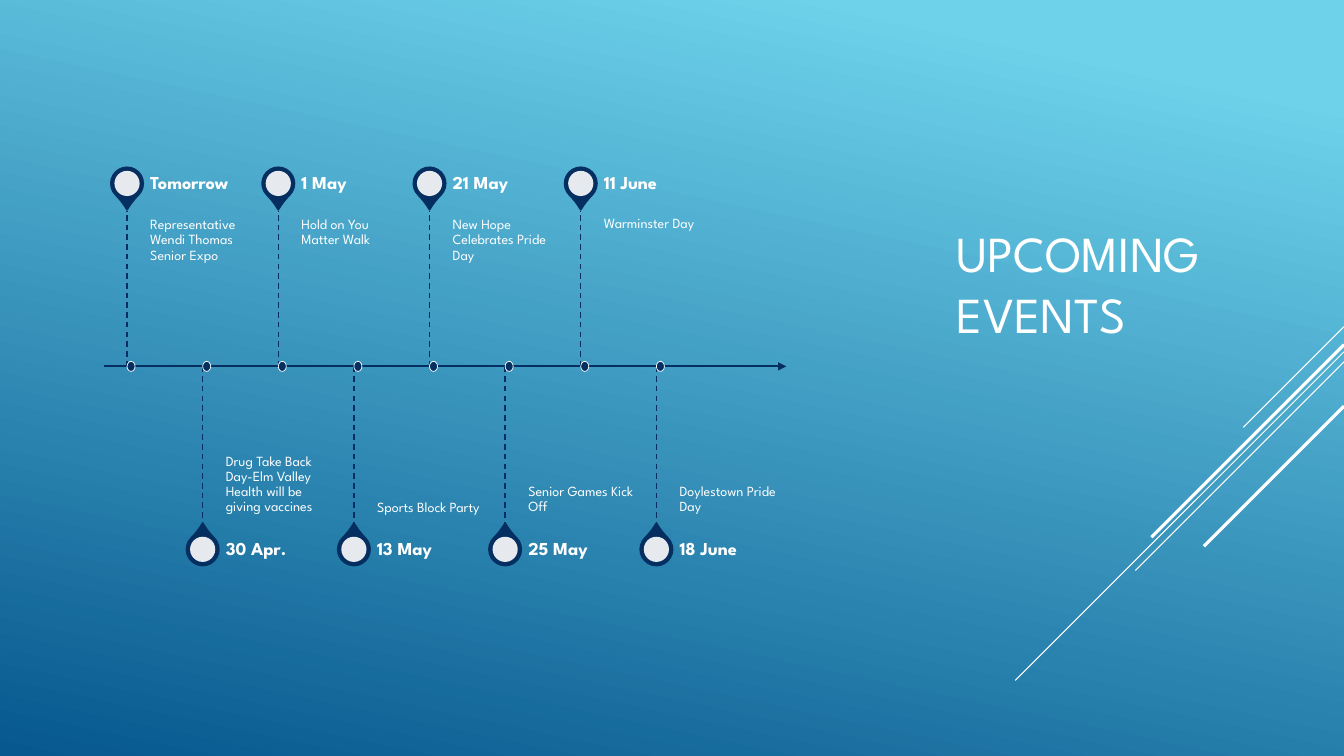
from collections import namedtuple

from lxml.etree import SubElement
from pptx import Presentation
from pptx.dml.color import RGBColor
from pptx.enum.dml import MSO_LINE as Dash
from pptx.enum.shapes import MSO_CONNECTOR as Connector, MSO_SHAPE as Shape
from pptx.enum.text import MSO_ANCHOR as Anchor, PP_ALIGN as Align
from pptx.oxml.ns import qn
from pptx.util import Inches, Pt

WHITE = RGBColor(0xFF, 0xFF, 0xFF)
NAVY = RGBColor(0x05, 0x2F, 0x61)
SKY = RGBColor(0x6E, 0xD2, 0xEB)
OCEAN = RGBColor(0x06, 0x58, 0x8E)
FONT = "League Spartan"

Box = namedtuple("Box", "left top width height")
SLIDE = Box(0, 0, 13.33, 7.5)
COLUMN = 0.75
LABEL_HEIGHT = 0.54

EVENTS = [
    ("Tomorrow", "Representative Wendi Thomas Senior Expo"),
    ("30 Apr.", "Drug Take Back Day-Elm Valley Health will be giving vaccines"),
    ("1 May", "Hold on You Matter Walk"),
    ("13 May", "Sports Block Party"),
    ("21 May", "New Hope Celebrates Pride Day"),
    ("25 May", "Senior Games Kick Off"),
    ("11 June", "Warminster Day"),
    ("18 June", "Doylestown Pride Day"),
]


def add_text(page, box, text, size, bold=False, anchor=Anchor.MIDDLE,
             margins=(0.1, 0.05, 0.1, 0.05), spacing=1.0):
    frame = page.shapes.add_textbox(*map(Inches, box)).text_frame
    frame.word_wrap = True
    frame.vertical_anchor = anchor
    (frame.margin_left, frame.margin_top,
     frame.margin_right, frame.margin_bottom) = map(Inches, margins)
    para = frame.paragraphs[0]
    para.alignment = Align.LEFT
    para.line_spacing = spacing
    span = para.add_run()
    span.text = text
    span.font.name = FONT
    span.font.size = Pt(size)
    span.font.bold = bold
    span.font.color.rgb = WHITE


def add_line(page, start, end, color, width, dash=None, arrow=False):
    line = page.shapes.add_connector(
        Connector.STRAIGHT, *map(Inches, (*start, *end)))
    line.line.color.rgb = color
    line.line.width = Pt(width)
    if dash:
        line.line.dash_style = dash
    if arrow:
        SubElement(line.line._get_or_add_ln(), qn("a:tailEnd"), type="triangle")
    SubElement(line._element.spPr, qn("a:effectLst"))


def add_filled(page, kind, box, fill, outline=None, width=0, alpha=None):
    shape = page.shapes.add_shape(kind, *map(Inches, box))
    shape.shadow.inherit = False
    shape.fill.solid()
    shape.fill.fore_color.rgb = fill
    if alpha:
        color = shape._element.spPr.find(qn("a:solidFill"))[0]
        SubElement(color, qn("a:alpha"), val=str(alpha * 1000))
    if outline is None:
        shape.line.fill.background()
    else:
        shape.line.color.rgb = outline
        shape.line.width = Pt(width)
    return shape


def centred(x, y, size):
    return Box(x - size / 2, y - size / 2, size, size)


def add_backdrop(page, box):
    backdrop = page.shapes.add_shape(Shape.RECTANGLE, *map(Inches, box))
    backdrop.shadow.inherit = False
    backdrop.line.fill.background()
    backdrop.fill.gradient()
    backdrop.fill.gradient_angle = 258
    stops = backdrop.fill.gradient_stops
    for stop, color, position in zip(stops, (SKY, OCEAN), (0.1, 1)):
        stop.color.rgb = color
        stop.position = position


def add_streaks(page, box):
    right = box.left + box.width
    streaks = [(0, 1, 0.75), (0.25, 3.26, 0.75), (0.35, 2.07, 0.75),
               (0.18, 1.91, 2.25), (0.79, 1.39, 2.25)]
    for drop, run, width in streaks:
        start = box.top + drop
        add_line(page, (right, start), (right - run, start + run), WHITE, width)


def add_event(page, stem, axis, half, side, date, note):
    above = side < 0
    reach = half - LABEL_HEIGHT
    pin = axis + side * (half - LABEL_HEIGHT / 2)
    drop = add_filled(page, Shape.TEAR, centred(stem, pin, 0.32), NAVY, NAVY, 1.25)
    drop.adjustments[0] = 1.15
    drop.rotation = 135 if above else 315
    add_filled(page, Shape.OVAL, centred(stem, pin, 0.25), WHITE, alpha=90)

    text_left, text_width = stem + 0.23, 1.06
    add_text(page, Box(text_left, axis - reach if above else axis, text_width, reach),
             note, 10, spacing=0.9,
             anchor=Anchor.TOP if above else Anchor.BOTTOM,
             margins=(0, 0.07, 0.07, 0.1) if above else (0, 0.1, 0, 0.07))
    add_text(page, Box(text_left, pin - LABEL_HEIGHT / 2, text_width, LABEL_HEIGHT),
             date, 13, bold=True, spacing=0.9, margins=(0, 0, 0.09, 0))
    add_line(page, (stem, axis), (stem, axis + side * reach), NAVY, 1, dash=Dash.DASH)
    add_filled(page, Shape.OVAL, Box(stem, axis - 0.05, 0.08, 0.1), NAVY, WHITE, 0.5)


def add_timeline(page, box):
    half = box.height / 2
    axis = box.top + half
    add_line(page, (box.left, axis), (box.left + box.width, axis),
             NAVY, 1.5, arrow=True)
    for index, (date, note) in enumerate(EVENTS):
        stem = box.left + 0.23 + index * COLUMN
        add_event(page, stem, axis, half, 1 if index % 2 else -1, date, note)


def main():
    deck = Presentation()
    deck.slide_width = Inches(SLIDE.width)
    deck.slide_height = Inches(SLIDE.height)
    page = deck.slides.add_slide(deck.slide_layouts[6])
    add_backdrop(page, SLIDE)
    add_streaks(page, Box(10.07, 3.24, 3.26, 3.51))
    add_text(page, Box(9.39, 1.03, 3.33, 3.55), "UPCOMING EVENTS", 36)
    add_timeline(page, Box(1.03, 1.55, 6.77, 4.17))
    deck.save("out.pptx")


if __name__ == "__main__":
    main()
